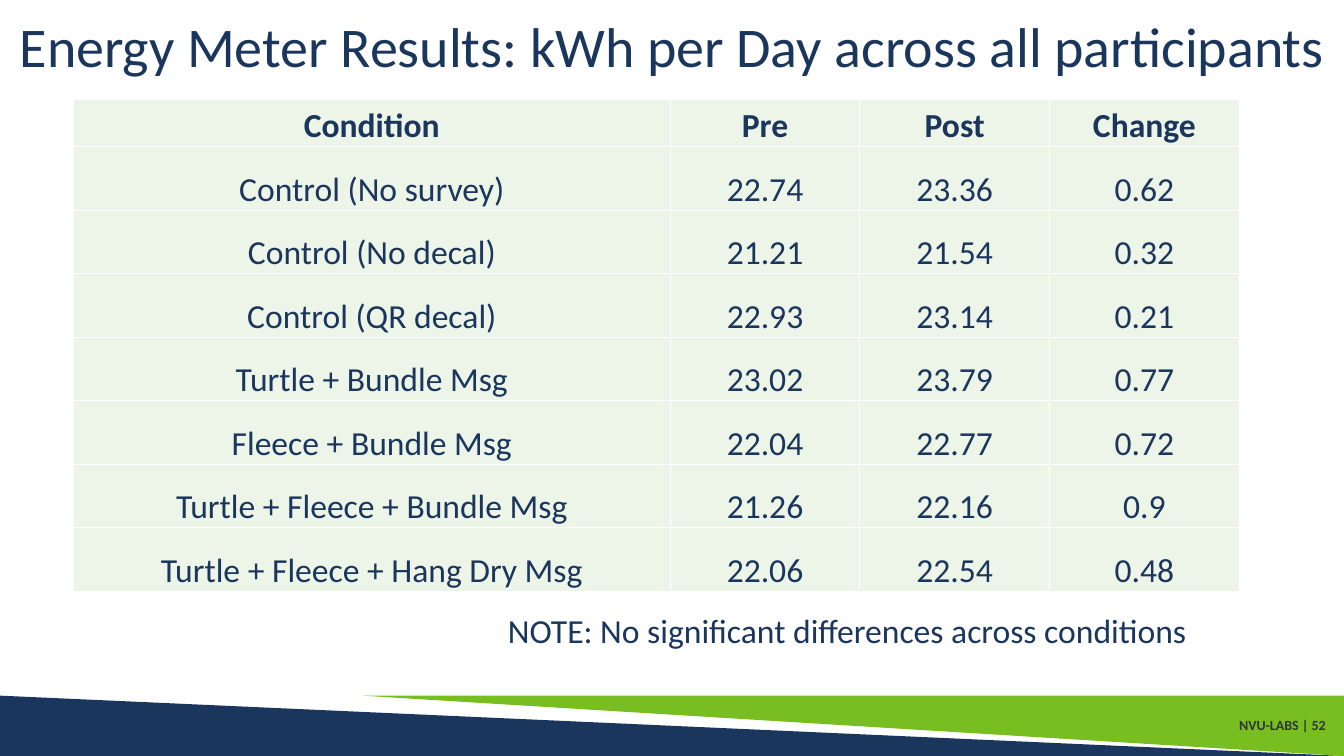
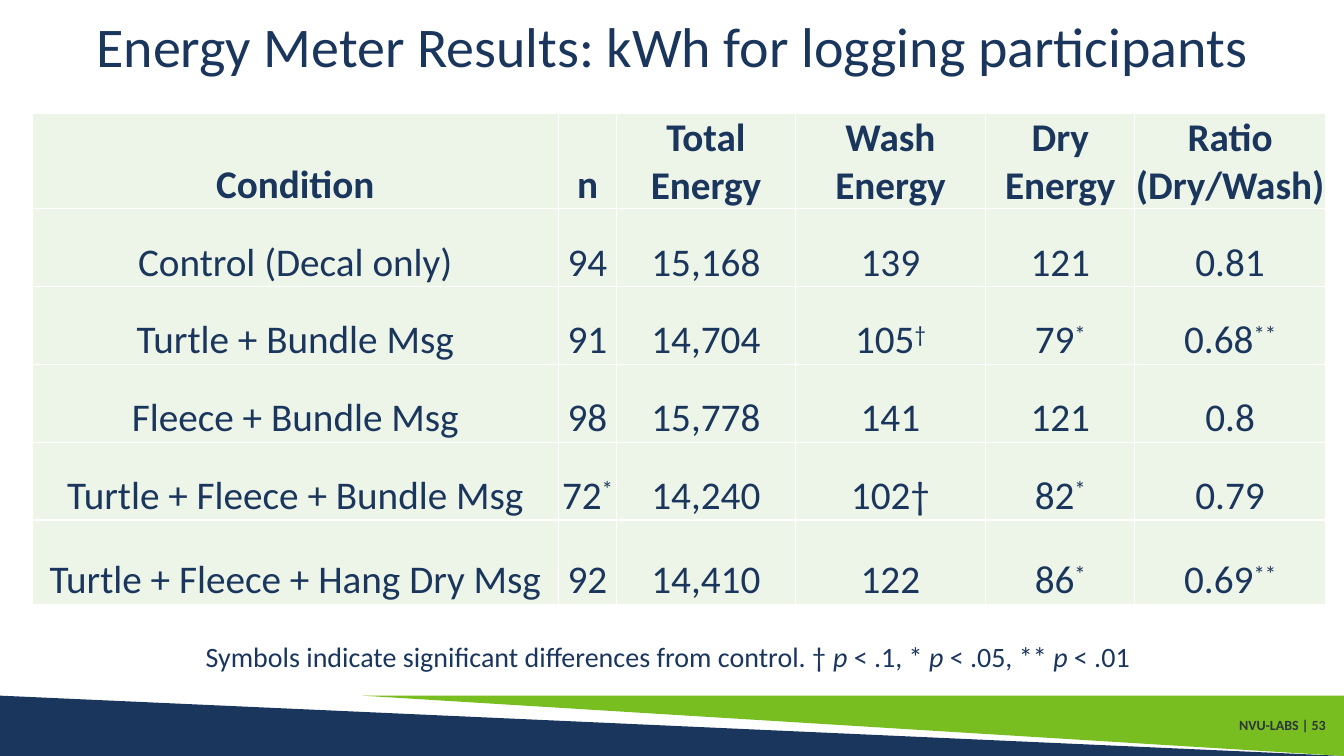
from dataclasses import dataclass

from lxml import etree
from pptx import Presentation
from pptx.dml.color import RGBColor
from pptx.enum.shapes import MSO_SHAPE
from pptx.enum.text import MSO_ANCHOR, MSO_AUTO_SIZE, PP_ALIGN
from pptx.oxml.ns import qn
from pptx.util import Cm, Pt

RT_TRIANGLE = MSO_SHAPE.RIGHT_TRIANGLE
MIDDLE, BOTTOM = MSO_ANCHOR.MIDDLE, MSO_ANCHOR.BOTTOM
LEFT, CENTER, RIGHT = PP_ALIGN.LEFT, PP_ALIGN.CENTER, PP_ALIGN.RIGHT
NO_FIT, GROW = MSO_AUTO_SIZE.NONE, MSO_AUTO_SIZE.SHAPE_TO_FIT_TEXT
TITLE_ONLY = 5
SLIDE_W, SLIDE_H = 33.87, 19.05
BAND_TOP = 17.53


@dataclass(frozen=True)
class Theme:
    font: str = "Calibri"
    navy: str = "1B365D"
    green: str = "78BE20"
    pale: str = "EDF4E8"
    white: str = "FFFFFF"
    charcoal: str = "2E3438"
    title: int = 40
    footer: int = 10


@dataclass(frozen=True)
class Box:
    left: float
    top: float
    width: float
    height: float

    def emu(self) -> tuple:
        return Cm(self.left), Cm(self.top), Cm(self.width), Cm(self.height)


@dataclass(frozen=True)
class Band:
    left: float
    color: str
    rotation: int = 0


@dataclass(frozen=True)
class Run:
    text: str
    italic: bool = False
    raised: bool = False


@dataclass(frozen=True)
class Grid:
    left: float
    top: float
    cols: tuple
    rows: tuple
    size: int
    cells: tuple


@dataclass(frozen=True)
class Note:
    box: Box
    size: int
    runs: tuple


@dataclass(frozen=True)
class Page:
    number: int
    title: str
    grid: Grid
    note: Note


THEME = Theme()
BANDS = (Band(0, THEME.navy), Band(9.14, THEME.green, 180))
TITLE_BOX = Box(0, 0, SLIDE_W, 2.51)
FOOTER_BOX = Box(29.82, 17.83, 3.84, 0.94)

PAGES = (
    Page(
        52,
        "Energy Meter Results: kWh per Day across all participants",
        Grid(
            1.85, 2.51, (15.04,) + (4.78,) * 3, (1.19,) + (1.6,) * 7, 24,
            (
                ("Condition", "Pre", "Post", "Change"),
                ("Control (No survey)", "22.74", "23.36", "0.62"),
                ("Control (No decal)", "21.21", "21.54", "0.32"),
                ("Control (QR decal)", "22.93", "23.14", "0.21"),
                ("Turtle + Bundle Msg", "23.02", "23.79", "0.77"),
                ("Fleece + Bundle Msg", "22.04", "22.77", "0.72"),
                ("Turtle + Fleece + Bundle Msg", "21.26", "22.16", "0.9"),
                ("Turtle + Fleece + Hang Dry Msg", "22.06", "22.54", "0.48"),
            ),
        ),
        Note(
            Box(12.55, 15.24, 17.81, 1.27), 24,
            (Run("NOTE: No significant differences across conditions"),),
        ),
    ),
    Page(
        53,
        "Energy Meter Results: kWh for logging participants",
        Grid(
            0.81, 2.87, (13.26, 1.47, 4.5, 4.8, 3.76, 4.8),
            (2.18,) + (1.96,) * 4 + (2.13,), 28,
            (
                ("Condition", "n", "Total Energy", "Wash Energy", "Dry Energy", "Ratio (Dry/Wash)"),
                ("Control (Decal only)", "94", "15,168", "139", "121", "0.81"),
                ("Turtle + Bundle Msg", "91", "14,704", "105^†", "79^*", "0.68^**"),
                ("Fleece + Bundle Msg", "98", "15,778", "141", "121", "0.8"),
                ("Turtle + Fleece + Bundle Msg", "72^*", "14,240", "102†", "82^*", "0.79"),
                ("Turtle + Fleece + Hang Dry Msg", "92", "14,410", "122", "86^*", "0.69^**"),
            ),
        ),
        Note(
            Box(4.93, 16, 24.03, 1.12), 20,
            (
                Run("Symbols indicate significant differences from control. † "),
                Run("p ", italic=True),
                Run("< .1, * "),
                Run("p", italic=True),
                Run(" < .05, ** "),
                Run("p", italic=True),
                Run(" < .01"),
            ),
        ),
    ),
)


def rgb(color: str) -> RGBColor:
    return RGBColor.from_string(color)


def write(tf, runs: tuple, size: int, color: str = THEME.navy,
          align=LEFT, bold: bool = False, spacing: float = 1.0) -> None:
    p = tf.paragraphs[0]
    p.alignment = align
    p.line_spacing = spacing
    p.font.name = THEME.font
    p.font.size = Pt(size)
    p.font.bold = bold
    p.font.color.rgb = rgb(color)
    for run in runs:
        r = p.add_run()
        r.text = run.text
        if run.italic:
            r.font.italic = True
        if run.raised:
            r._r.get_or_add_rPr().set("baseline", "30000")


def cell_runs(text: str) -> tuple:
    value, _, mark = text.partition("^")
    return (Run(value), Run(mark, raised=True)) if mark else (Run(value),)


def add_border(cell) -> None:
    tc_pr = cell._tc.get_or_add_tcPr()
    for side in ("a:lnL", "a:lnR", "a:lnT", "a:lnB"):
        ln = etree.SubElement(tc_pr, qn(side), w=str(Pt(1)))
        fill = etree.SubElement(ln, qn("a:solidFill"))
        etree.SubElement(fill, qn("a:srgbClr"), val=THEME.white)


def add_band(s, band: Band) -> None:
    box = Box(band.left, BAND_TOP, SLIDE_W - band.left, SLIDE_H - BAND_TOP)
    sp = s.shapes.add_shape(RT_TRIANGLE, *box.emu())
    sp.rotation = band.rotation
    sp.shadow.inherit = False
    sp.fill.solid()
    sp.fill.fore_color.rgb = rgb(band.color)
    sp.line.fill.background()


def add_footer(s, number: int) -> None:
    tf = s.shapes.add_textbox(*FOOTER_BOX.emu()).text_frame
    tf.word_wrap = True
    tf.vertical_anchor = MIDDLE
    write(tf, (Run(f"NVU-LABS | {number}"),), THEME.footer, THEME.charcoal,
          RIGHT, bold=True, spacing=0.9)


def set_title(s, text: str) -> None:
    sp = s.shapes.title
    sp.left, sp.top, sp.width, sp.height = TITLE_BOX.emu()
    tf = sp.text_frame
    tf.auto_size = NO_FIT
    tf.vertical_anchor = MIDDLE
    write(tf, (Run(text),), THEME.title, align=CENTER, spacing=0.9)


def add_grid(s, grid: Grid) -> None:
    box = Box(grid.left, grid.top, sum(grid.cols), sum(grid.rows))
    table = s.shapes.add_table(len(grid.rows), len(grid.cols), *box.emu()).table
    table.horz_banding = False
    for col, width in zip(table.columns, grid.cols):
        col.width = Cm(width)
    for i, (row, height) in enumerate(zip(table.rows, grid.rows)):
        row.height = Cm(height)
        for cell, text in zip(row.cells, grid.cells[i]):
            cell.margin_left = cell.margin_right = cell.margin_top = Cm(0.02)
            cell.margin_bottom = 0
            cell.vertical_anchor = BOTTOM
            add_border(cell)
            cell.fill.solid()
            cell.fill.fore_color.rgb = rgb(THEME.pale)
            write(cell.text_frame, cell_runs(text), grid.size, align=CENTER, bold=i == 0)


def add_note(s, note: Note) -> None:
    tf = s.shapes.add_textbox(*note.box.emu()).text_frame
    tf.word_wrap = False
    tf.auto_size = GROW
    write(tf, note.runs, note.size)


def add_page(prs, page: Page) -> None:
    s = prs.slides.add_slide(prs.slide_layouts[TITLE_ONLY])
    for band in BANDS:
        add_band(s, band)
    add_footer(s, page.number)
    set_title(s, page.title)
    add_grid(s, page.grid)
    add_note(s, page.note)


def main() -> None:
    prs = Presentation()
    prs.slide_width, prs.slide_height = Cm(SLIDE_W), Cm(SLIDE_H)
    for page in PAGES:
        add_page(prs, page)
    prs.save("out.pptx")


if __name__ == "__main__":
    main()
